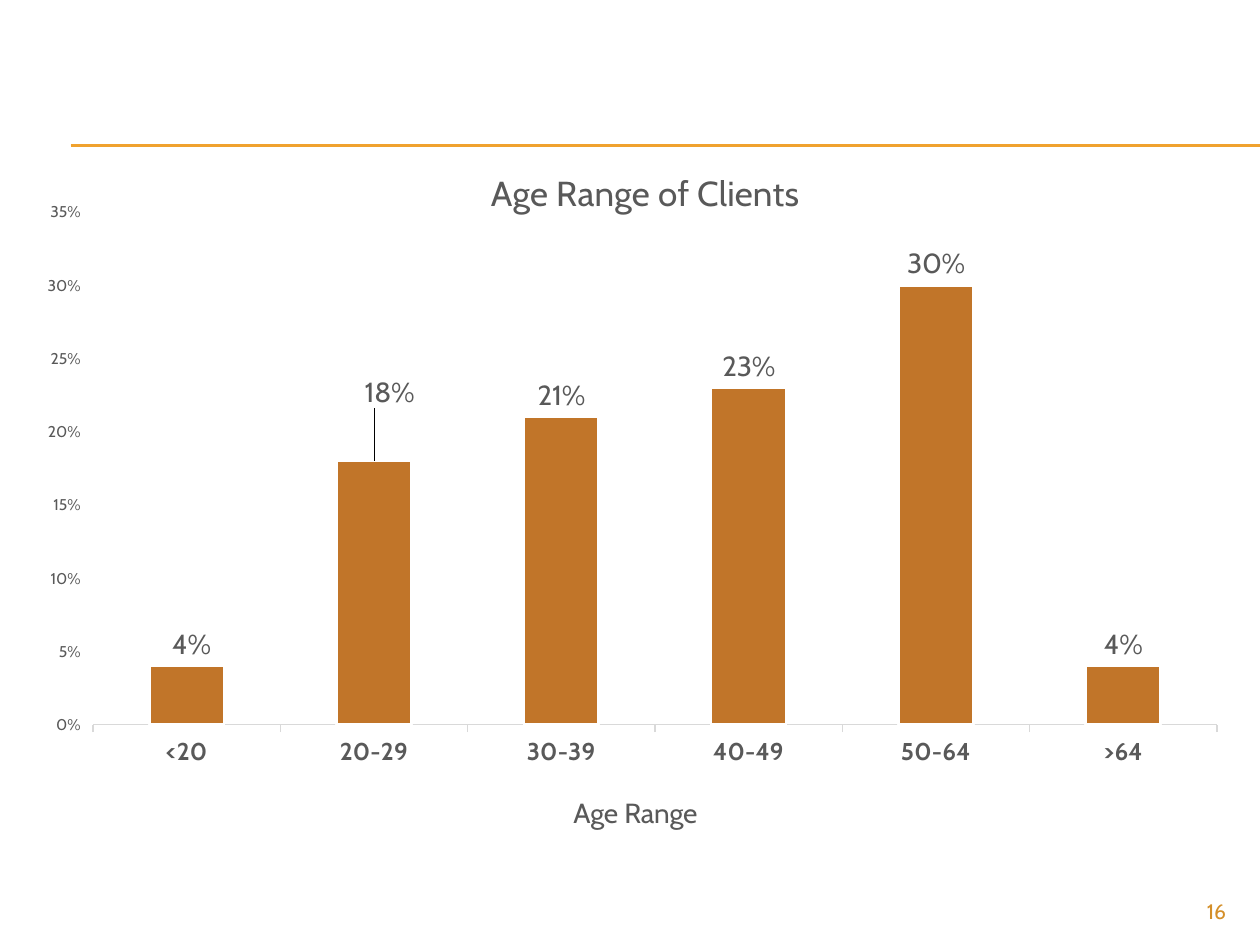
from lxml.etree import SubElement
from pptx import Presentation
from pptx.chart.data import CategoryChartData
from pptx.dml.color import RGBColor
from pptx.enum.chart import XL_CHART_TYPE, XL_LABEL_POSITION, XL_TICK_MARK
from pptx.enum.shapes import MSO_CONNECTOR
from pptx.enum.text import PP_ALIGN
from pptx.oxml.ns import qn
from pptx.util import Inches, Pt

FONT = "Cabin"
GOLD = RGBColor(0xF0, 0xA2, 0x2E)
DARK_GOLD = RGBColor(0xD4, 0x8F, 0x29)
BRONZE = RGBColor(0xC1, 0x75, 0x29)
GREY = RGBColor(0x59, 0x59, 0x59)
PALE_GREY = RGBColor(0xD9, 0xD9, 0xD9)
WHITE = RGBColor(0xFF, 0xFF, 0xFF)


def style_font(font, size, color=GREY, bold=False):
    font.name = FONT
    font.size = Pt(size)
    font.bold = bold
    font.color.rgb = color


def set_layout(element, index, **settings):
    """Give a chart part a manual layout, as its child at the given index."""
    for old in element.findall(qn("c:layout")):
        element.remove(old)
    layout = SubElement(element, qn("c:layout"))
    element.insert(index, layout)
    manual = SubElement(layout, qn("c:manualLayout"))
    for name, value in settings.items():
        SubElement(manual, qn(f"c:{name}")).set("val", str(value))


deck = Presentation()
deck.slide_width, deck.slide_height = Inches(10), Inches(7.5)
page = deck.slides.add_slide(deck.slide_layouts[6])

# Double rule under the header
for y in (1.15, 1.16):
    rule = page.shapes.add_connector(
        MSO_CONNECTOR.STRAIGHT, Inches(0.56), Inches(y), Inches(10), Inches(y))
    rule.line.color.rgb = GOLD
    rule.line.width = Pt(0.75)
    SubElement(rule._element.spPr, qn("a:effectLst"))

# Page number
box = page.shapes.add_textbox(Inches(9), Inches(7.08), Inches(0.83), Inches(0.27))
box.text_frame.word_wrap = True
para = box.text_frame.paragraphs[0]
para.alignment = PP_ALIGN.RIGHT
span = para.add_run()
span.text = "16"
style_font(span.font, 12, DARK_GOLD)

# Column chart
data = CategoryChartData(number_format="0%")
data.categories = ["<20", "20-29", "30-39", "40-49", "50-64", ">64"]
data.add_series("Series 1", [0.04, 0.18, 0.21, 0.23, 0.3, 0.04])
chart = page.shapes.add_chart(
    XL_CHART_TYPE.COLUMN_CLUSTERED,
    Inches(0.33), Inches(1.07), Inches(9.5), Inches(5.58), data).chart
chart.font.name = FONT
chart.font.size = Pt(10)
chart.has_legend = False
set_layout(chart._chartSpace.chart.plotArea, 0, layoutTarget="inner",
           xMode="edge", yMode="edge", x=0.043, y=0.111, w=0.939, h=0.737)

# Axes
ages, shares = chart.category_axis, chart.value_axis
style_font(ages.tick_labels.font, 14, bold=True)
ages.major_tick_mark = XL_TICK_MARK.OUTSIDE
ages.format.line.color.rgb = PALE_GREY
ages.format.line.width = Pt(0.75)
style_font(shares.tick_labels.font, 9)
shares.tick_labels.number_format = "0%"
shares.tick_labels.number_format_is_linked = False
shares.has_major_gridlines = False
shares.minimum_scale, shares.maximum_scale, shares.major_unit = 0, 0.35, 0.05
shares.format.line.fill.background()

# Chart title and axis title
for title, text, size, x, y in (
        (chart.chart_title, "Age Range of Clients", 20, 0.37, 0.04),
        (ages.axis_title, "Age Range", 16, 0.44, 0.94)):
    span = title.text_frame.paragraphs[0].add_run()
    span.text = text
    style_font(span.font, size)
    set_layout(title._element, 1, xMode="edge", yMode="edge", x=x, y=y)

# Columns and their labels
plot = chart.plots[0]
plot.gap_width = 150
plot.vary_by_categories = False
series = plot.series[0]
series.format.fill.solid()
series.format.fill.fore_color.rgb = BRONZE
series.format.line.color.rgb = WHITE
series.format.line.width = Pt(1.5)
labels = series.data_labels
labels.show_value = True
labels.number_format = "0%"
labels.number_format_is_linked = False
labels.position = XL_LABEL_POSITION.OUTSIDE_END
style_font(labels.font, 16)

# Labels shifted from their usual place
for index, x, y in ((0, 0.004, 0), (1, 0.013, -0.068)):
    label = series.points[index].data_label
    style_font(label.font, 16)
    label.position = XL_LABEL_POSITION.OUTSIDE_END
    element = series._element.xpath(f"c:dLbls/c:dLbl[c:idx/@val='{index}']")[0]
    set_layout(element, 1, x=x, y=y)

deck.save("out.pptx")
